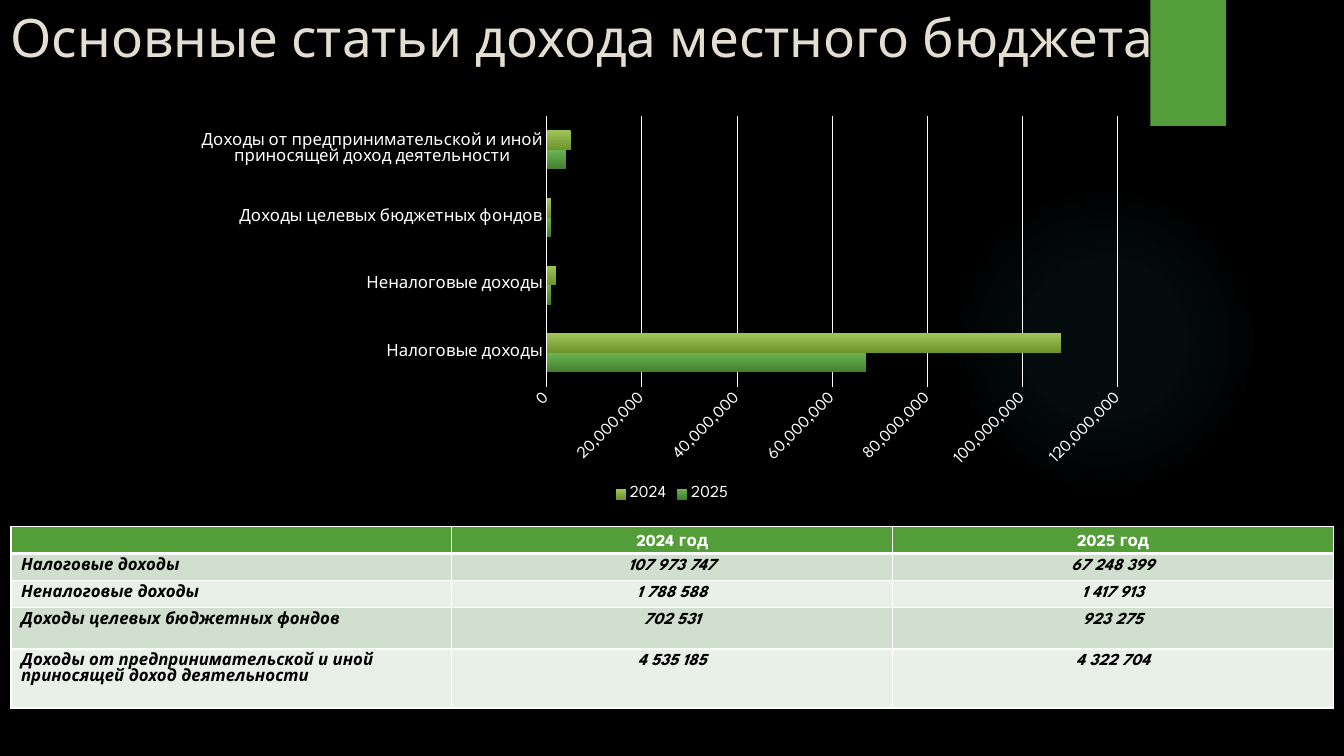
from dataclasses import dataclass

from lxml import etree
from pptx import Presentation
from pptx.chart.data import CategoryChartData
from pptx.dml.color import RGBColor
from pptx.enum.chart import XL_CHART_TYPE, XL_LEGEND_POSITION, XL_TICK_MARK
from pptx.enum.shapes import MSO_SHAPE
from pptx.enum.text import MSO_ANCHOR, PP_ALIGN
from pptx.oxml import parse_xml
from pptx.oxml.ns import nsdecls, qn
from pptx.util import Inches, Pt

BAR_CLUSTERED = XL_CHART_TYPE.BAR_CLUSTERED
LEGEND_BOTTOM = XL_LEGEND_POSITION.BOTTOM
NO_TICK = XL_TICK_MARK.NONE
ELLIPSE, RECTANGLE = MSO_SHAPE.OVAL, MSO_SHAPE.RECTANGLE
TOP, MIDDLE = MSO_ANCHOR.TOP, MSO_ANCHOR.MIDDLE
LEFT, CENTER = PP_ALIGN.LEFT, PP_ALIGN.CENTER

SLIDE_WIDTH, SLIDE_HEIGHT = Inches(13.33), Inches(7.5)


@dataclass(frozen=True)
class Theme:
    """Colours, font and type sizes of the slide."""
    font: str = "League Spartan"
    title_size: float = 37.8
    body_size: float = 12
    background: str = "000000"
    title: str = "E3DED1"
    light: str = "FFFFFF"
    dark: str = "000000"
    accent: str = "549E39"
    glow: str = "4AB5C4"
    bands: tuple = ("D1DFCE", "E9F0E8")
    gradients: tuple = (("6BB453", "437F2E"), ("9DC55A", "6F9429"))


THEME = Theme()
YEARS = ("2024", "2025")
INCOME = {
    "Налоговые доходы": (107973747, 67248399),
    "Неналоговые доходы": (1788588, 1417913),
    "Доходы целевых бюджетных фондов": (702531, 923275),
    "Доходы от предпринимательской и иной приносящей доход деятельности":
        (4535185, 4322704),
}
ROW_SHARES = (3.6, 3.6, 3.6, 5.47, 7.8)


def across(share):
    """Turn a percentage of the slide width into a length."""
    return round(SLIDE_WIDTH * share / 100)


def down(share):
    """Turn a percentage of the slide height into a length."""
    return round(SLIDE_HEIGHT * share / 100)


def area(left, top, width, height):
    """Turn percentages of the slide into a position and a size."""
    return across(left), down(top), across(width), down(height)


def style_font(font, size, color, bold=False, italic=False):
    """Apply the theme font with a size, a colour and a weight."""
    font.name = THEME.font
    font.size = Pt(size)
    font.bold = bold
    font.italic = italic
    font.color.rgb = RGBColor.from_string(color)


def fill_solid(fill, color):
    """Give a fill one plain colour."""
    fill.solid()
    fill.fore_color.rgb = RGBColor.from_string(color)


def add_plain_shape(slide, preset, place, color):
    """Add a shape without line or shadow."""
    shape = slide.shapes.add_shape(preset, *place)
    shape.shadow.inherit = False
    fill_solid(shape.fill, color)
    shape.line.fill.background()
    return shape


def add_glow(slide, place):
    """Add a circle that fades out from its centre."""
    properties = add_plain_shape(slide, ELLIPSE, place, THEME.glow)._element.spPr
    stops = "".join(
        f'<a:gs pos="{position}000"><a:srgbClr val="{THEME.glow}">'
        f'<a:alpha val="{alpha}000"/></a:srgbClr></a:gs>'
        for position, alpha in ((0, 7), (36, 6), (69, 0)))
    gradient = parse_xml(
        f'<a:gradFill {nsdecls("a")}><a:gsLst>{stops}</a:gsLst><a:path path="circle">'
        '<a:fillToRect l="50000" t="50000" r="50000" b="50000"/></a:path></a:gradFill>')
    properties.replace(properties.find(qn("a:solidFill")), gradient)


def add_ribbon(slide, place):
    """Add the accent ribbon with its soft shadow."""
    shape = add_plain_shape(slide, RECTANGLE, place, THEME.accent)
    effects = shape._element.spPr.find(qn("a:effectLst"))
    effects.append(parse_xml(
        f'<a:outerShdw {nsdecls("a")} blurRad="{Pt(3)}" dist="{Pt(2)}" dir="5400000">'
        f'<a:srgbClr val="{THEME.dark}"><a:alpha val="45000"/></a:srgbClr></a:outerShdw>'))


def add_title(slide, place, text):
    """Add the heading of the slide."""
    frame = slide.shapes.add_textbox(*place).text_frame
    frame.word_wrap = True
    frame.vertical_anchor = MIDDLE
    frame.text = text
    style_font(frame.paragraphs[0].runs[0].font, THEME.title_size, THEME.title)


def style_axis(axis):
    """Give an axis the theme font and no tick marks."""
    axis.major_tick_mark = axis.minor_tick_mark = NO_TICK
    style_font(axis.tick_labels.font, THEME.body_size, THEME.light)


def style_line(line, width):
    """Draw a chart line in the light colour."""
    line.width = Pt(width)
    line.color.rgb = RGBColor.from_string(THEME.light)


def add_income_chart(slide, place):
    """Add the clustered bars of income by year, in whole millions."""
    data = CategoryChartData(number_format="#,##0")
    data.categories = list(INCOME)
    for index, year in reversed(list(enumerate(YEARS))):
        data.add_series(year, [round(values[index], -6) for values in INCOME.values()])
    chart = slide.shapes.add_chart(BAR_CLUSTERED, *place, data).chart
    style_font(chart.font, THEME.body_size, THEME.light)
    chart.has_title = False
    chart.has_legend = True
    chart.legend.position = LEGEND_BOTTOM
    chart.legend.include_in_layout = False
    style_font(chart.legend.font, THEME.body_size, THEME.light)
    plot = chart.plots[0]
    plot.gap_width = 150
    plot.vary_by_categories = False
    for series, colors in zip(plot.series, THEME.gradients):
        fill = series.format.fill
        fill.gradient()
        fill.gradient_angle = 270
        for stop, color in zip(fill.gradient_stops, colors):
            stop.color.rgb = RGBColor.from_string(color)
    categories, values = chart.category_axis, chart.value_axis
    style_axis(categories)
    style_line(categories.format.line, 1)
    style_axis(values)
    values.format.line.fill.background()
    values.has_major_gridlines = True
    style_line(values.major_gridlines.format.line, 0.75)
    values.tick_labels.number_format = "#,##0"
    values.tick_labels.number_format_is_linked = False
    values._element.txPr.find(qn("a:bodyPr")).set("rot", "-2700000")


def add_borders(cell, bottom_width):
    """Outline a table cell in the light colour."""
    properties = cell._tc.get_or_add_tcPr()
    widths = {"lnL": 1, "lnR": 1, "lnT": 1, "lnB": bottom_width}
    for index, (side, width) in enumerate(widths.items()):
        border = etree.Element(qn(f"a:{side}"), w=str(Pt(width)))
        fill = etree.SubElement(border, qn("a:solidFill"))
        etree.SubElement(fill, qn("a:srgbClr"), val=THEME.light)
        properties.insert(index, border)


def fill_cell(cell, text, row, column):
    """Write and format one cell of the table."""
    header = row == 0
    fill_solid(cell.fill, THEME.accent if header else THEME.bands[(row - 1) % 2])
    add_borders(cell, 3 if header else 1)
    cell.margin_bottom = 0
    cell.vertical_anchor = MIDDLE if header else TOP
    cell.text = text
    paragraph = cell.text_frame.paragraphs[0]
    paragraph.alignment = CENTER if column else LEFT
    color = THEME.light if header else THEME.dark
    for font in (paragraph.font, *(run.font for run in paragraph.runs)):
        style_font(font, THEME.body_size, color, True, not header)


def add_income_table(slide, place):
    """Add the table of income by year."""
    rows = [["", *(f"{year} год" for year in YEARS)]]
    for name, values in INCOME.items():
        rows.append([name, *(f"{value:,}".replace(",", " ") for value in values)])
    table = slide.shapes.add_table(len(rows), len(rows[0]), *place).table
    for row, (texts, share) in enumerate(zip(rows, ROW_SHARES)):
        table.rows[row].height = down(share)
        for column, text in enumerate(texts):
            fill_cell(table.cell(row, column), text, row, column)


def main():
    """Build the slide and save it."""
    presentation = Presentation()
    presentation.slide_width, presentation.slide_height = SLIDE_WIDTH, SLIDE_HEIGHT
    slide = presentation.slides.add_slide(presentation.slide_layouts[6])
    fill_solid(slide.background.fill, THEME.background)
    add_glow(slide, area(70.59, 24.4, 23.11, 41.07))
    add_ribbon(slide, area(85.6, 0, 5.63, 16.67))
    add_title(slide, area(0.05, 0.4, 99.95, 8.8), "Основные статьи дохода местного бюджета")
    add_income_chart(slide, area(15, 14.27, 70, 52.67))
    add_income_table(slide, area(0.82, 69.6, 98.4, sum(ROW_SHARES)))
    presentation.save("out.pptx")


if __name__ == "__main__":
    main()
